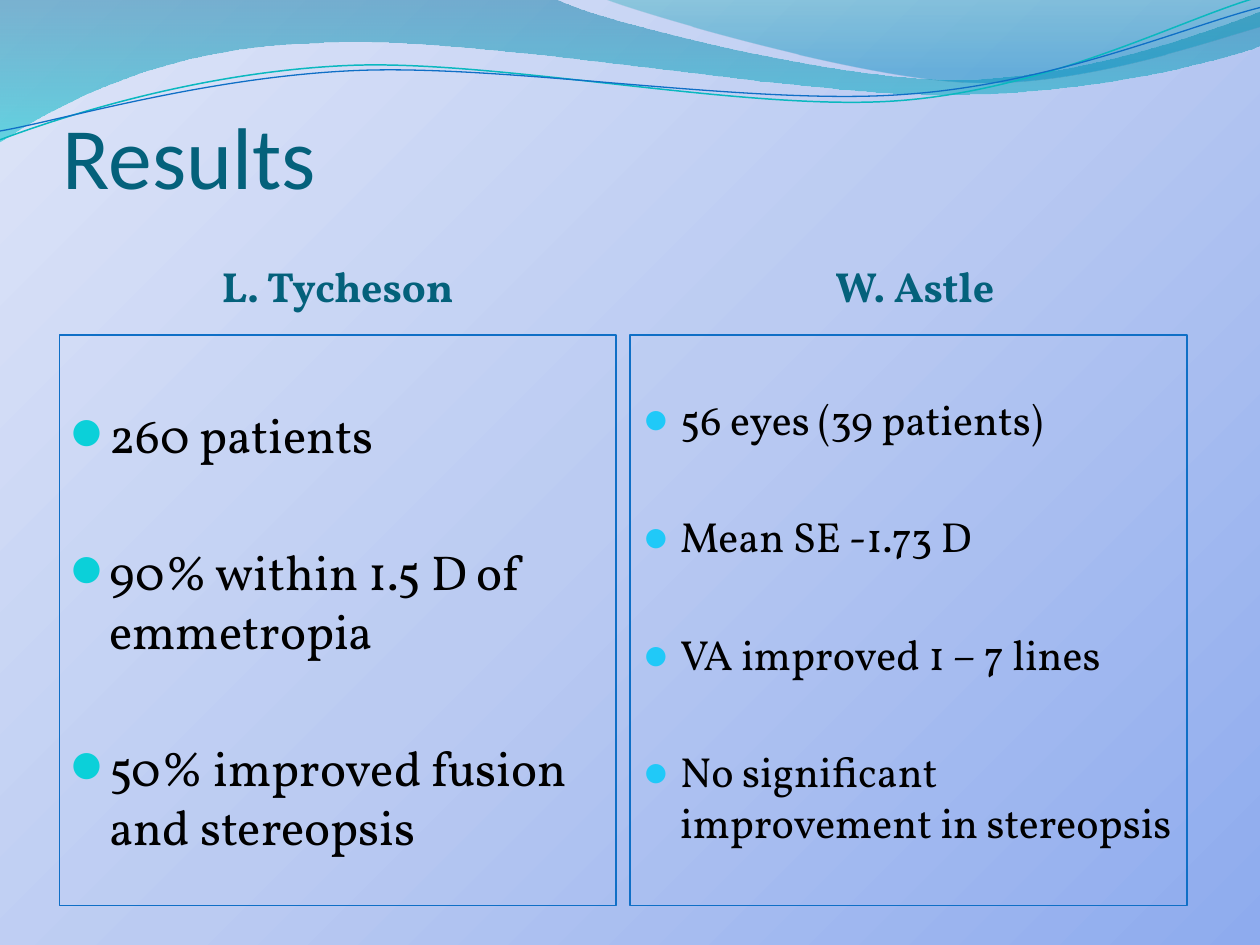
"""Build the Results slide, on a grid of 10 by 7.5 equal squares."""
import lxml.etree
import pptx
import pptx.dml.color
import pptx.enum.shapes
import pptx.enum.text
import pptx.oxml.ns
import pptx.util

RGB = pptx.dml.color.RGBColor
DARK = RGB(0x04, 0x61, 0x7B)
BLUE = RGB(0x0F, 0x6F, 0xC6)
TEAL = RGB(0x0A, 0xB8, 0xBF)
AQUA = RGB(0x0B, 0xD0, 0xD9)
CYAN = RGB(0x20, 0xC9, 0xF8)
BLACK = RGB(0, 0, 0)
SKY = [(0, RGB(0x8E, 0xAB, 0xEE), 100), (50, RGB(0xBB, 0xCB, 0xF2), 100),
       (100, RGB(0xDE, 0xE5, 0xF8), 100)]
SEA = [(0, RGB(0x00, 0x74, 0xA1), 45), (100, RGB(0x00, 0xC6, 0xCF), 55)]
DEEP = [(0, RGB(0x00, 0xA1, 0xA9), 30), (80, RGB(0x00, 0x8B, 0xBF), 45)]

Pt = pptx.util.Pt
qn = pptx.oxml.ns.qn
sub = lxml.etree.SubElement
MSO = pptx.enum.text.MSO_ANCHOR
ALIGN = pptx.enum.text.PP_ALIGN

deck = pptx.Presentation()
deck.slide_width = pptx.util.Inches(10)
deck.slide_height = pptx.util.Inches(7.5)
unit = deck.slide_width // 10
slide = deck.slides.add_slide(deck.slide_layouts[6])
shapes = slide.shapes


def blend(fill, stops, angle):
    fill.gradient()
    fill.gradient_angle = angle
    items = fill._fill._gradFill.find(qn("a:gsLst"))
    items.clear()
    for share, color, alpha in stops:
        stop = sub(items, qn("a:gs"), pos=str(share * 1000))
        tone = sub(stop, qn("a:srgbClr"), val=str(color))
        sub(tone, qn("a:alpha"), val=str(alpha * 1000))


def draw(start, legs, closed):
    """Draw legs of one point as lines and longer legs as Bezier curves."""
    dots = [(x * unit, y * unit) for leg in legs for x, y in leg]
    pen = shapes.build_freeform(start[0] * unit, start[1] * unit)
    pen.add_line_segments(dots, close=closed)
    shape = pen.convert_to_shape()
    shape.shadow.inherit = False
    marks = iter(list(shape._element.iter(qn("a:lnTo"))))
    for leg in legs:
        for _ in range(len(leg) // 3):
            bend, *rest = next(marks), next(marks), next(marks)
            bend.tag = qn("a:cubicBezTo")
            for mark in rest:
                bend.append(mark[0])
                mark.getparent().remove(mark)
        if len(leg) == 1:
            next(marks)
    return shape


blend(slide.background.fill, SKY, 135)

top = [(4.76, 0.17), (6.64, 0.63), (7.58, 0.63),
       (8.53, 0.63), (9.58, 0.26), (10, 0.09)]
base = [(9.83, 0.44), (8.7, 0.76), (7.46, 0.75),
        (6.22, 0.75), (3.82, 0.28), (2.57, 0.34),
        (1.29, 0.36), (0.46, 0.83), (-0.01, 1.13)]
crest = [(5.09, 0.11), (6.82, 0.62), (7.69, 0.65),
         (8.56, 0.69), (9.61, 0.32), (10, 0.21)]
high = [(0.48, 0.93), (1.58, 0.57), (2.77, 0.52),
        (3.95, 0.47), (5.93, 0.89), (7.13, 0.8),
        (8.33, 0.71), (9.38, 0.15), (9.98, -0.02)]
low = [(0.47, 0.96), (1.64, 0.61), (2.83, 0.56),
       (4.03, 0.51), (5.97, 0.84), (7.17, 0.75),
       (8.36, 0.67), (9.41, 0.21), (10, 0.06)]

bands = [
    ((0, 0), [[(4.4, -0.01)], top, [(10.01, 0.36)], base], SEA),
    ((4.79, -0.01), [crest, [(10, 0)]], DEEP),
]
for start, legs, stops in bands:
    band = draw(start, legs, True)
    blend(band.fill, stops, 270)
    band.line.fill.background()

for start, leg, color, width in [((0, 1.11), high, TEAL, 0.85),
                                 ((0, 1.04), low, BLUE, 0.75)]:
    wave = draw(start, [leg], False)
    wave.fill.background()
    wave.line.color.rgb = color
    wave.line.width = Pt(width)

heads = [
    ("Results", 0.5, 0.39, 9, 1.25, MSO.BOTTOM, ALIGN.LEFT, "Calibri", 50, False),
    ("L. Tycheson", 0.47, 2.07, 4.42, 0.4, MSO.TOP, ALIGN.CENTER, "Vollkorn", 24, True),
    ("W. Astle", 5.05, 2.07, 4.42, 0.4, MSO.TOP, ALIGN.CENTER, "Vollkorn", 24, True),
]
for text, x, y, w, h, anchor, align, face, size, bold in heads:
    box = shapes.add_textbox(*(int(n * unit) for n in (x, y, w, h)))
    frame = box.text_frame
    frame.word_wrap = True
    frame.vertical_anchor = anchor
    frame.margin_left = frame.margin_right = 0
    frame.margin_top = frame.margin_bottom = 0
    line = frame.paragraphs[0]
    line.text = text
    line.alignment = align
    line.font.name = face
    line.font.size = Pt(size)
    line.font.bold = bold
    line.font.color.rgb = DARK

lists = [
    (0.47, 0.55, 28, "●", "Vollkorn", AQUA, 70, [
        "260 patients",
        "90% within 1.5 D of emmetropia",
        "50% improved fusion and stereopsis"]),
    (5, 0.46, 24, "•", "Calibri", CYAN, 130, [
        "56 eyes (39 patients)",
        "Mean SE -1.73 D",
        "VA improved 1 – 7 lines",
        "No significant improvement in stereopsis"]),
]
for x, drop, size, mark, face, color, scale, texts in lists:
    box = shapes.add_shape(
        pptx.enum.shapes.MSO_SHAPE.RECTANGLE,
        *(int(n * unit) for n in (x, 2.66, 4.42, 4.53)))
    box.shadow.inherit = False
    box.fill.background()
    box.line.color.rgb = BLUE
    box.line.width = Pt(0.75)
    frame = box.text_frame
    frame.word_wrap = True
    frame.vertical_anchor = MSO.TOP
    frame.margin_left = frame.margin_right = unit // 10
    frame.margin_top = int(drop * unit)
    frame.margin_bottom = unit // 20
    for i, text in enumerate(texts):
        line = frame.add_paragraph() if i else frame.paragraphs[0]
        line.text = text
        line.alignment = ALIGN.LEFT
        line.space_before = Pt(size * 1.6 if i else 0)
        props = line._p.get_or_add_pPr()
        props.set("marL", str(unit * 3 // 10))
        props.set("indent", str(-unit * 3 // 10))
        sub(sub(props, qn("a:buClr")), qn("a:srgbClr"), val=str(color))
        sub(props, qn("a:buSzPct"), val=str(scale * 1000))
        sub(props, qn("a:buFont"), typeface=face)
        sub(props, qn("a:buChar"), char=mark)
        line.font.name = "Vollkorn"
        line.font.size = Pt(size)
        line.font.color.rgb = BLACK

deck.save("out.pptx")
